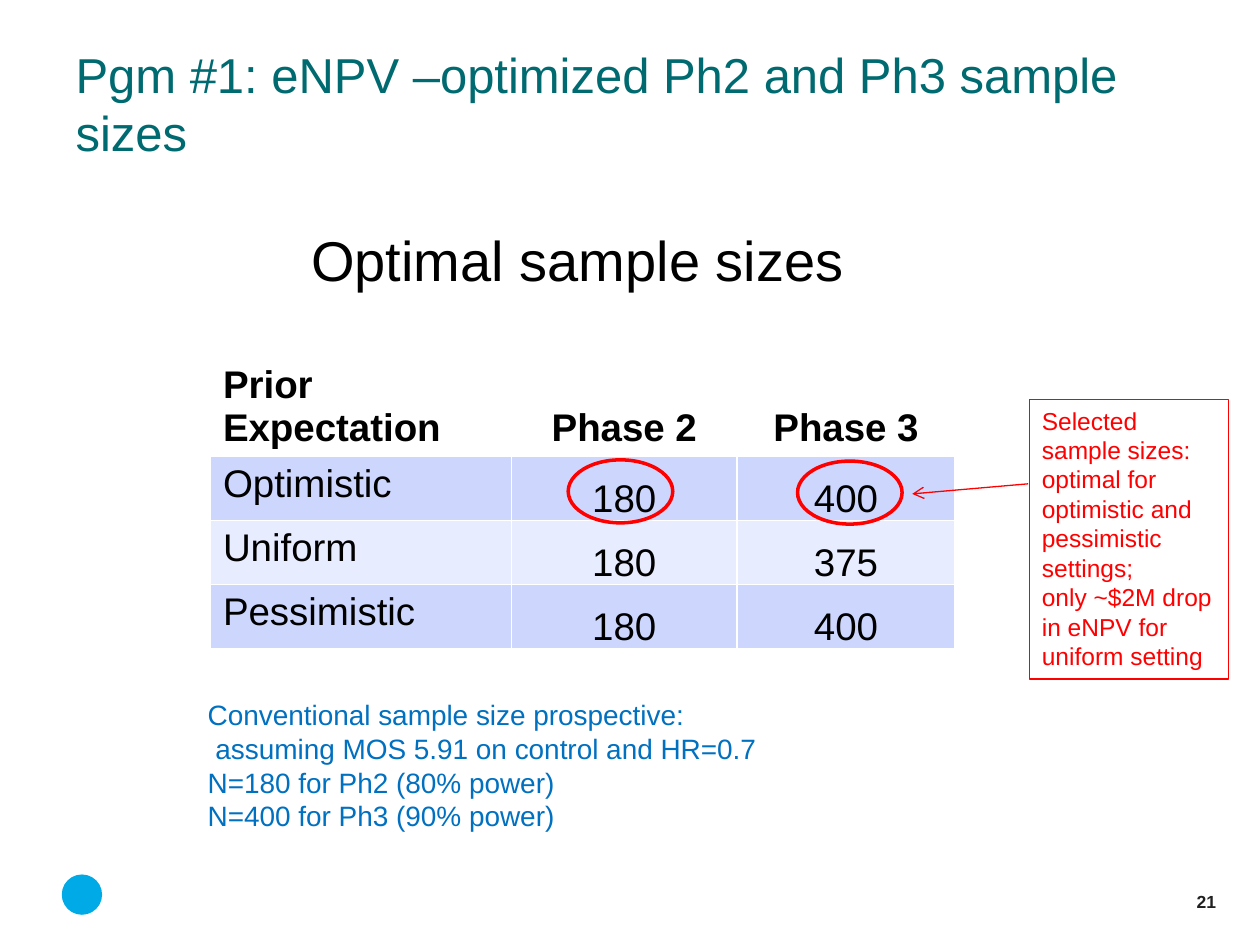
from dataclasses import dataclass

from lxml import etree
from pptx import Presentation
from pptx import util as u
from pptx.dml.color import RGBColor
from pptx.enum import shapes, text
from pptx.oxml.ns import qn

FONT = "Arial"
BLACK, TEAL, BLUE, RED, SKY = "000000", "006A71", "0070C0", "FF0000", "00AAE7"
BAND_DARK, BAND_LIGHT = "CDD7FE", "E8ECFF"
LEFT, CENTER, RIGHT = text.PP_ALIGN.LEFT, text.PP_ALIGN.CENTER, text.PP_ALIGN.RIGHT
TOP, MIDDLE, BOTTOM = text.MSO_ANCHOR.TOP, text.MSO_ANCHOR.MIDDLE, text.MSO_ANCHOR.BOTTOM


@dataclass
class Box:
    """Position and size in inches."""
    left: float
    top: float
    width: float
    height: float

    def lengths(self) -> list:
        """Return the four values as lengths."""
        return [u.Inches(v) for v in (self.left, self.top, self.width, self.height)]


@dataclass
class Style:
    """Look of a block of text."""
    size: float
    color: str = BLACK
    bold: bool = False
    align: text.PP_ALIGN = LEFT
    anchor: text.MSO_ANCHOR = TOP


@dataclass
class Label:
    """A text box with its wording."""
    box: Box
    wording: str
    style: Style


LABELS = [
    Label(Box(8.92, 7.03, 0.83, 0.25), "21", Style(10, "212121", True, RIGHT, MIDDLE)),
    Label(Box(1.67, 1.72, 5.83, 0.67), "Optimal sample sizes",
          Style(32, align=CENTER, anchor=MIDDLE)),
    Label(Box(1.55, 5.49, 6.5, 1.21),
          "Conventional sample size prospective:\v assuming MOS 5.91 on control and HR=0.7\v"
          "N=180 for Ph2 (80% power)\nN=400 for Ph3 (90% power)", Style(16, BLUE)),
]
SAMPLE_SIZES = [
    ("Prior Expectation", "Phase 2", "Phase 3"),
    ("Optimistic", "180", "400"),
    ("Uniform", "180", "375"),
    ("Pessimistic", "180", "400"),
]
COLUMN_WIDTHS = (2.39, 1.79, 1.73)
ROW_HEIGHTS = (0.89, 0.51, 0.51, 0.51)
SELECTED_SIZES = [Box(4.51, 3.65, 0.83, 0.5), Box(6.33, 3.66, 0.83, 0.5)]


def rgb(value: str) -> RGBColor:
    """Turn a hex string into a colour."""
    return RGBColor.from_string(value)


def write(frame, wording: str, style: Style) -> None:
    """Put styled wording into a text frame."""
    frame.text = wording
    frame.word_wrap = True
    frame.vertical_anchor = style.anchor
    for paragraph in frame.paragraphs:
        paragraph.alignment = style.align
        for run in paragraph.runs:
            run.font.name = FONT
            run.font.size = u.Pt(style.size)
            run.font.bold = style.bold
            run.font.color.rgb = rgb(style.color)


def add_label(slide, label: Label) -> None:
    """Add a text box."""
    write(slide.shapes.add_textbox(*label.box.lengths()).text_frame, label.wording, label.style)


def add_outline(slide, kind: shapes.MSO_SHAPE, box: Box, weight: float):
    """Add an unfilled red shape."""
    outline = slide.shapes.add_shape(kind, *box.lengths())
    outline.shadow.inherit = False
    outline.fill.background()
    outline.line.color.rgb = rgb(RED)
    outline.line.width = u.Pt(weight)
    return outline


def add_badge(slide, box: Box) -> None:
    """Add a plain filled disc in the footer."""
    badge = slide.shapes.add_shape(shapes.MSO_SHAPE.OVAL, *box.lengths())
    badge.shadow.inherit = False
    badge.fill.solid()
    badge.fill.fore_color.rgb = rgb(SKY)
    badge.line.fill.background()


def add_size_table(slide, box: Box) -> None:
    """Add the table of sample sizes by prior."""
    table = slide.shapes.add_table(len(ROW_HEIGHTS), len(COLUMN_WIDTHS), *box.lengths()).table
    for column, width in zip(table.columns, COLUMN_WIDTHS):
        column.width = u.Inches(width)
    for r, (row, height) in enumerate(zip(table.rows, ROW_HEIGHTS)):
        row.height = u.Inches(height)
        for c, cell in enumerate(row.cells):
            header, number = r == 0, r > 0 and c > 0
            align = CENTER if c else LEFT
            anchor = BOTTOM if header or number else TOP
            write(cell.text_frame, SAMPLE_SIZES[r][c], Style(22, BLACK, header, align))
            cell.vertical_anchor = anchor
            if header:
                cell.fill.background()
            else:
                cell.fill.solid()
                cell.fill.fore_color.rgb = rgb(BAND_DARK if r % 2 else BAND_LIGHT)
            if number:
                cell.margin_left = cell.margin_right = cell.margin_top = u.Inches(0.01)
                cell.margin_bottom = 0


def add_arrow(slide, start: tuple[float, float], end: tuple[float, float]) -> None:
    """Add a thin red arrow."""
    arrow = slide.shapes.add_connector(
        shapes.MSO_CONNECTOR.STRAIGHT, *(u.Inches(v) for v in start + end))
    arrow.line.color.rgb = rgb(RED)
    arrow.line.width = u.Pt(0.75)
    line = arrow._element.spPr.find(qn("a:ln"))
    etree.SubElement(line, qn("a:tailEnd"), type="arrow")
    etree.SubElement(arrow._element.spPr, qn("a:effectLst"))


def main() -> None:
    """Build the slide and save it."""
    deck = Presentation()
    deck.slide_width, deck.slide_height = u.Inches(10), u.Inches(7.5)
    slide = deck.slides.add_slide(deck.slide_layouts[5])

    add_badge(slide, Box(0.49, 6.94, 0.32, 0.32))
    title = slide.shapes.title
    title.left, title.top, title.width, title.height = Box(0.5, 0.3, 9, 1.25).lengths()
    write(title.text_frame, "Pgm #1: eNPV –optimized Ph2 and Ph3 sample sizes", Style(28, TEAL))

    add_size_table(slide, Box(1.67, 2.73, sum(COLUMN_WIDTHS), sum(ROW_HEIGHTS)))
    for label in LABELS:
        add_label(slide, label)
    for box in SELECTED_SIZES:
        add_outline(slide, shapes.MSO_SHAPE.OVAL, box, 2)
    callout = add_outline(slide, shapes.MSO_SHAPE.RECTANGLE, Box(8.17, 3.17, 1.58, 2.22), 0.75)
    write(callout.text_frame,
          "Selected sample sizes: optimal for optimistic and pessimistic settings;\v"
          "only ~$2M drop in eNPV for uniform setting", Style(14, RED))
    add_arrow(slide, (8.16, 3.84), (7.24, 3.92))

    deck.save("out.pptx")


if __name__ == "__main__":
    main()
